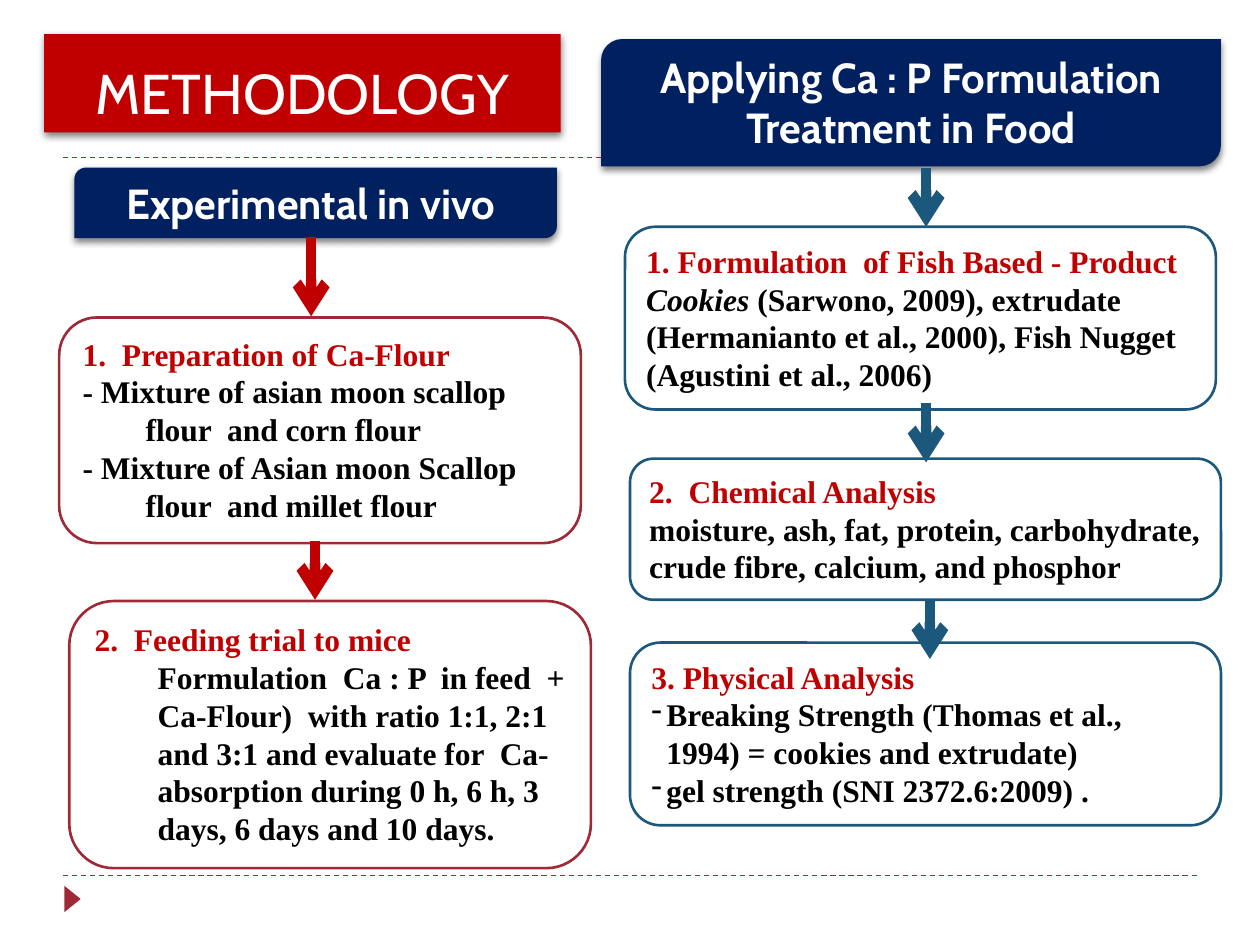
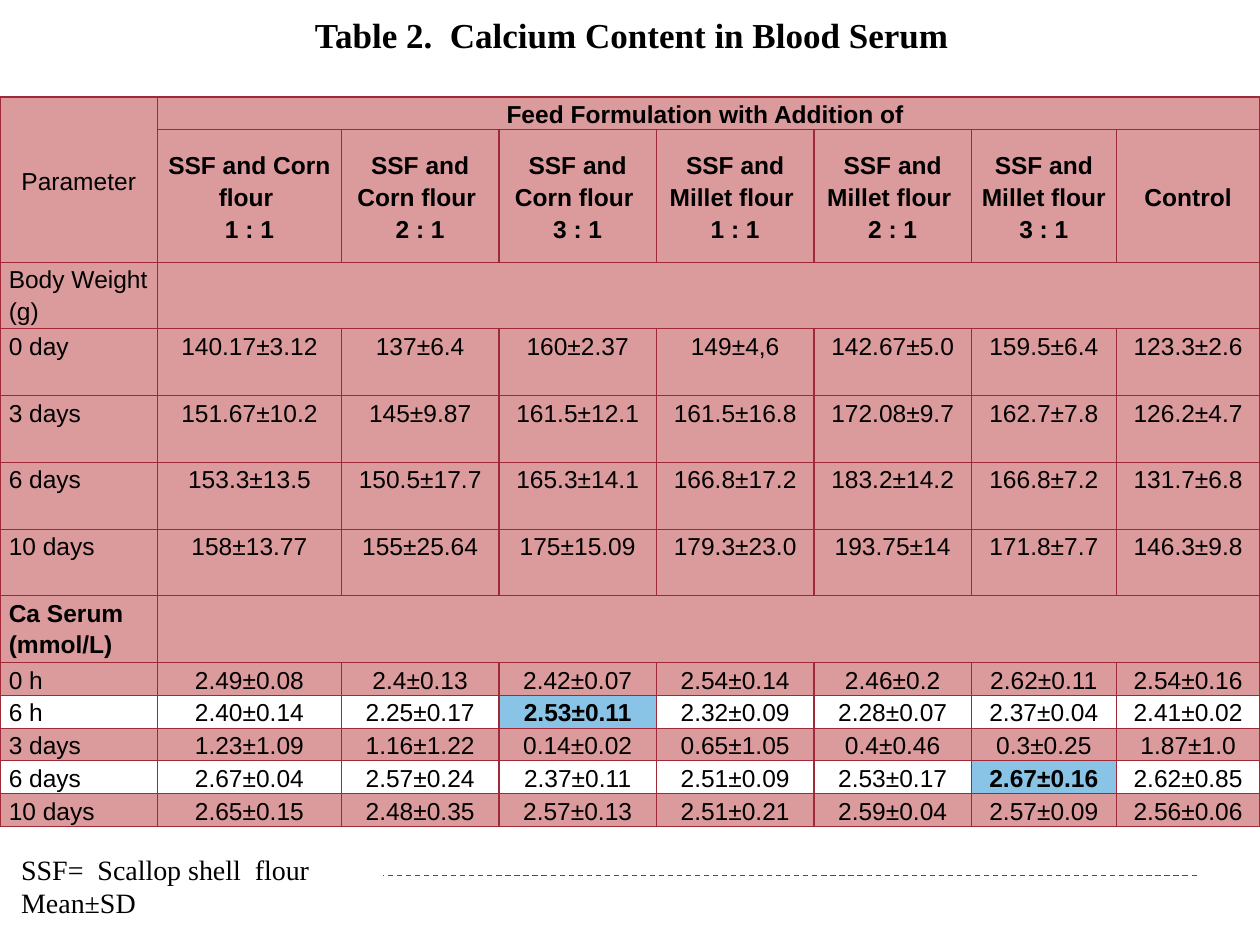
from itertools import product
from lxml.etree import SubElement
from pptx import Presentation
from pptx.dml.color import RGBColor
from pptx.enum.dml import MSO_LINE
from pptx.enum.shapes import MSO_CONNECTOR, MSO_SHAPE
from pptx.enum.text import MSO_ANCHOR, PP_ALIGN
from pptx.oxml.ns import qn
from pptx.util import Pt

PX = 9144
WHITE = RGBColor(0xFF, 0xFF, 0xFF)
BLACK = RGBColor(0, 0, 0)
RED = RGBColor(0xC0, 0, 0)
WINE = RGBColor(0x9F, 0x29, 0x36)
ROSE = RGBColor(0xDB, 0x9A, 0x9B)
NAVY = RGBColor(0, 0x20, 0x60)
TEAL = RGBColor(0x1B, 0x58, 0x7C)
SKY = RGBColor(0x89, 0xC3, 0xE5)
SERIF = "Times New Roman"
HEAD = "Cabin"
SANS = "Arial"


def link(slide, x1, y1, x2, y2, color, width):
    line = slide.shapes.add_connector(
        MSO_CONNECTOR.STRAIGHT, x1 * PX, y1 * PX, x2 * PX, y2 * PX)
    line.line.color.rgb = color
    line.line.width = Pt(width)
    SubElement(line._element.spPr, qn("a:effectLst"))
    return line.line


def box(slide, kind, spot, fill, edge, lines, face, size, color, bold, align):
    place = [n * PX for n in spot]
    if kind is None:
        shape = slide.shapes.add_textbox(*place)
    else:
        shape = slide.shapes.add_shape(kind, *place)
        shape.shadow.inherit = False
        shape.fill.solid()
        shape.fill.fore_color.rgb = fill
        if edge is None:
            shape.line.fill.background()
        else:
            shape.line.color.rgb = edge
            shape.line.width = Pt(1.5)
    frame = shape.text_frame
    frame.word_wrap = True
    frame.vertical_anchor = MSO_ANCHOR.TOP
    for i, text in enumerate(lines):
        para = frame.add_paragraph() if i else frame.paragraphs[0]
        para.alignment = align
        lead, _, rest = text.rpartition("|")
        if lead:
            run = para.add_run()
            run.text = lead
            run.font.italic = True
        para.add_run().text = rest
        font = para.font
        font.name, font.size, font.bold = face, Pt(size), bold
        font.color.rgb = color
    return shape


deck = Presentation()
deck.slide_width, deck.slide_height = 1000 * PX, 750 * PX
flow, data = [deck.slides.add_slide(deck.slide_layouts[6]) for _ in range(2)]

for slide, y in [(flow, 695), (flow, 125), (data, 695)]:
    link(slide, 50, y, 950, y, WINE, 0.75).dash_style = MSO_LINE.DASH

mark = box(flow, MSO_SHAPE.ISOSCELES_TRIANGLE, (47, 707, 21, 13), WINE, None,
           [], HEAD, 18, WHITE, False, PP_ALIGN.LEFT)
mark.rotation = 90

ALT = MSO_SHAPE.FLOWCHART_ALTERNATE_PROCESS
ROUND = MSO_SHAPE.ROUNDED_RECTANGLE
steps = [
    (ALT, (47, 252, 414, 179), WINE, 50, False, [
        "1.  Preparation of Ca-Flour",
        "- Mixture of asian moon scallop flour  and corn flour",
        "- Mixture of Asian moon Scallop flour  and millet flour"]),
    (ALT, (55, 477, 414, 212), WINE, 50, False, [
        "2.  Feeding trial to mice",
        "\tFormulation  Ca : P  in feed  + Ca-Flour)  with ratio 1:1, 2:1 and 3:1 "
        "and evaluate for  Ca-absorption during 0 h, 6 h, 3 days, 6 days and 10 days."]),
    (ROUND, (496, 180, 469, 145), TEAL, 0, False, [
        "1. Formulation  of Fish Based - Product",
        "Cookies |(Sarwono, 2009), extrudate (Hermanianto et al., 2000), "
        "Fish Nugget (Agustini et al., 2006)"]),
    (ROUND, (500, 364, 469, 112), TEAL, 0, False, [
        "2.  Chemical Analysis",
        "moisture, ash, fat, protein, carbohydrate, crude fibre, calcium, and phosphor"]),
    (ROUND, (500, 510, 469, 145), TEAL, 12, True, [
        "3. Physical Analysis",
        "Breaking Strength (Thomas et al., 1994) = cookies and extrudate)",
        "gel strength (SNI 2372.6:2009) ."]),
]
for kind, spot, edge, hang, dash, lines in steps:
    step = box(flow, kind, spot, WHITE, edge, lines, SERIF, 18, BLACK, True, PP_ALIGN.LEFT)
    paras = step.text_frame.paragraphs
    paras[0].font.color.rgb = RED
    for i, para in enumerate(paras):
        props = para._p.get_or_add_pPr()
        props.set("marL", str(hang * PX))
        props.set("indent", str(-hang * PX))
        if dash and i:
            bullet = props.makeelement(qn("a:buChar"), {"char": "-"})
            props.insert(0, bullet)

heads = [
    ((59, 133, 383, 56), NAVY, "Experimental in vivo ", 24, True),
    ((477, 31, 492, 101), NAVY, "Applying Ca : P Formulation Treatment in Food", 24, True),
    ((35, 27, 410, 78), RED, "METHODOLOGY", 32, False),
]
for spot, fill, text, size, bold in heads:
    head = box(flow, MSO_SHAPE.ROUND_2_DIAG_RECTANGLE, spot, fill, None,
               [text], HEAD, size, WHITE, bold, PP_ALIGN.CENTER)
    glow = SubElement(head._element.spPr.find(qn("a:effectLst")), qn("a:outerShdw"),
                      blurRad="50800", dist="25400", dir="5400000", rotWithShape="0")
    tint = SubElement(glow, qn("a:srgbClr"), val="000000")
    SubElement(tint, qn("a:alpha"), val="50000")
head.adjustments[0] = 0
head.text_frame.vertical_anchor = MSO_ANCHOR.BOTTOM

for x, top, end, color in [(247, 188, 251, RED), (250, 429, 476, RED),
                           (735, 133, 180, TEAL), (735, 320, 367, TEAL),
                           (738, 477, 523, TEAL)]:
    arrow = link(flow, x, top, x, end, color, 6)
    SubElement(arrow._get_or_add_ln(), qn("a:tailEnd"), type="arrow")

blends = [f"SSF and {grain} flour \n{n} : 1"
          for grain, n in product(["Corn", "Millet"], [1, 2, 3])]
rows = [
    ["Parameter", "Feed Formulation with Addition of "],
    [""] + blends + ["Control"],
    ["Body Weight (g)"],
    ["0 day", "140.17±3.12", "137±6.4", "160±2.37", "149±4,6",
     "142.67±5.0", "159.5±6.4", "123.3±2.6"],
    ["3 days", "151.67±10.2", "145±9.87", "161.5±12.1", "161.5±16.8",
     "172.08±9.7", "162.7±7.8", "126.2±4.7"],
    ["6 days", "153.3±13.5", "150.5±17.7", "165.3±14.1", "166.8±17.2",
     "183.2±14.2", "166.8±7.2", "131.7±6.8"],
    ["10 days", "158±13.77", "155±25.64", "175±15.09", "179.3±23.0",
     "193.75±14", "171.8±7.7", "146.3±9.8"],
    ["Ca Serum (mmol/L)"],
    ["0 h", "2.49±0.08", "2.4±0.13", "2.42±0.07", "2.54±0.14",
     "2.46±0.2", "2.62±0.11", "2.54±0.16"],
    ["6 h", "2.40±0.14", "2.25±0.17", "2.53±0.11", "2.32±0.09",
     "2.28±0.07", "2.37±0.04", "2.41±0.02"],
    ["3 days", "1.23±1.09", "1.16±1.22", "0.14±0.02", "0.65±1.05",
     "0.4±0.46", "0.3±0.25", "1.87±1.0"],
    ["6 days", "2.67±0.04", "2.57±0.24", "2.37±0.11", "2.51±0.09",
     "2.53±0.17", "2.67±0.16", "2.62±0.85"],
    ["10 days", "2.65±0.15", "2.48±0.35", "2.57±0.13", "2.51±0.21",
     "2.59±0.04", "2.57±0.09", "2.56±0.06"],
]
wide = [125, 146, 125, 125, 125, 125, 115, 114]
tall = [26, 105] + [53] * 6 + [26] * 5
peaks = [(9, 3), (11, 6)]
grid = data.shapes.add_table(len(tall), len(wide), 0, 77 * PX,
                             sum(wide) * PX, sum(tall) * PX).table
grid.first_row = grid.horz_banding = False
for col, size in zip(grid.columns, wide):
    col.width = size * PX
for row, size in zip(grid.rows, tall):
    row.height = size * PX
for r, c in product(range(len(tall)), range(len(wide))):
    cell = grid.cell(r, c)
    cell.margin_left = cell.margin_right = 7 * PX
    cell.margin_top = cell.margin_bottom = 0
    if r == 1 or (r, c) == (0, 0):
        cell.vertical_anchor = MSO_ANCHOR.MIDDLE
    props = cell._tc.get_or_add_tcPr()
    for side in ["lnL", "lnR", "lnT", "lnB"]:
        edge = SubElement(props, qn("a:" + side), w=str(Pt(0.75)))
        paint = SubElement(edge, qn("a:solidFill"))
        SubElement(paint, qn("a:srgbClr"), val=str(WINE))
    cell.fill.solid()
    cell.fill.fore_color.rgb = SKY if (r, c) in peaks else WHITE if r in (9, 11) else ROSE
    if c < len(rows[r]) and rows[r][c]:
        cell.text_frame.text = rows[r][c]
        for para in cell.text_frame.paragraphs:
            para.alignment = PP_ALIGN.CENTER if c or r == 0 else PP_ALIGN.LEFT
            para.line_spacing = 1.15
            font = para.font
            font.name, font.size = SANS, Pt(14)
            font.bold = (r < 2 and c > 0) or (r, c) == (7, 0) or (r, c) in peaks
            font.color.rgb = BLACK
grid.cell(0, 0).merge(grid.cell(1, 0))
for r in [0, 2, 7]:
    grid.cell(r, 1).merge(grid.cell(r, 7))

title = box(data, None, (182, 5, 609, 44), None, None,
            ["Table 2.  Calcium Content in Blood Serum"],
            SERIF, 20, BLACK, True, PP_ALIGN.CENTER)
title.text_frame.paragraphs[0]._p.get_or_add_pPr().set("indent", str(30 * PX))
note = box(data, MSO_SHAPE.RECTANGLE, (7, 671, 297, 64), WHITE, None,
           ["SSF=  Scallop shell  flour", "Mean±SD"],
           SERIF, 16, BLACK, False, PP_ALIGN.LEFT)
for shape in [title, note]:
    shape.text_frame.vertical_anchor = MSO_ANCHOR.MIDDLE

deck.save("out.pptx")
